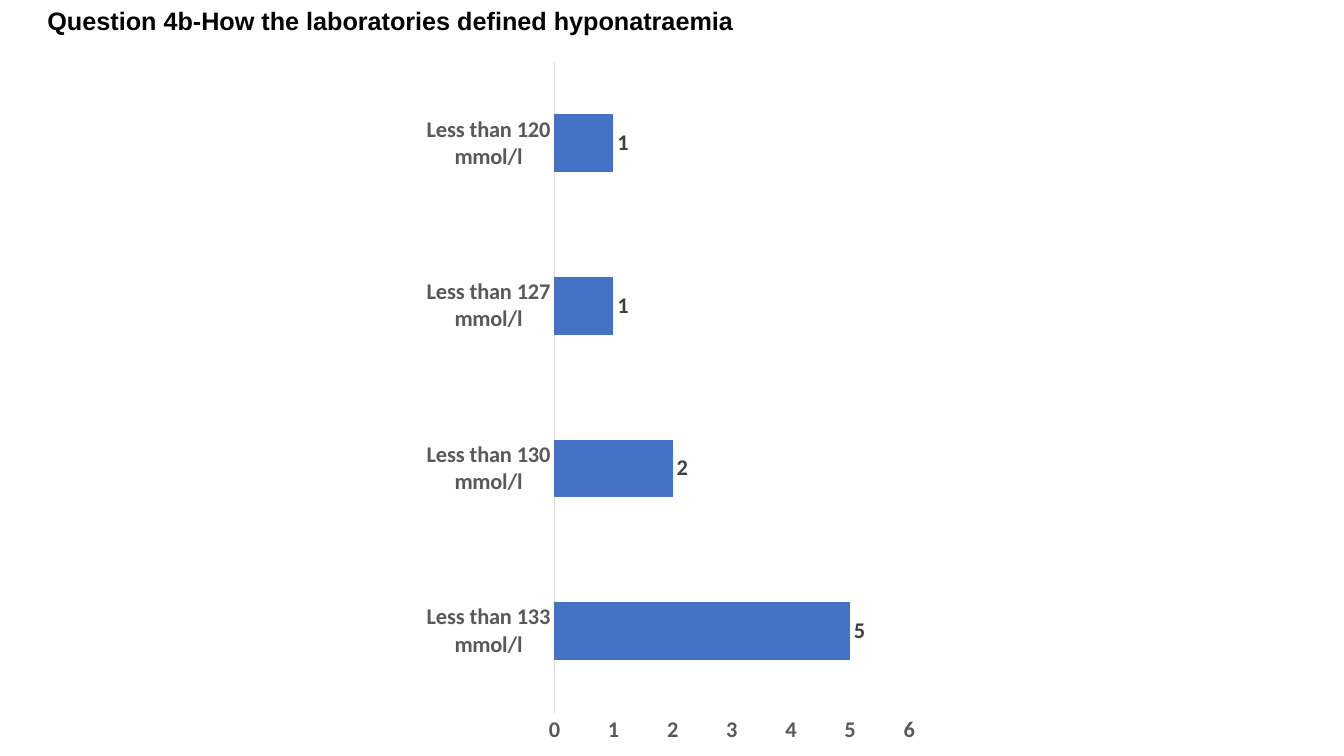
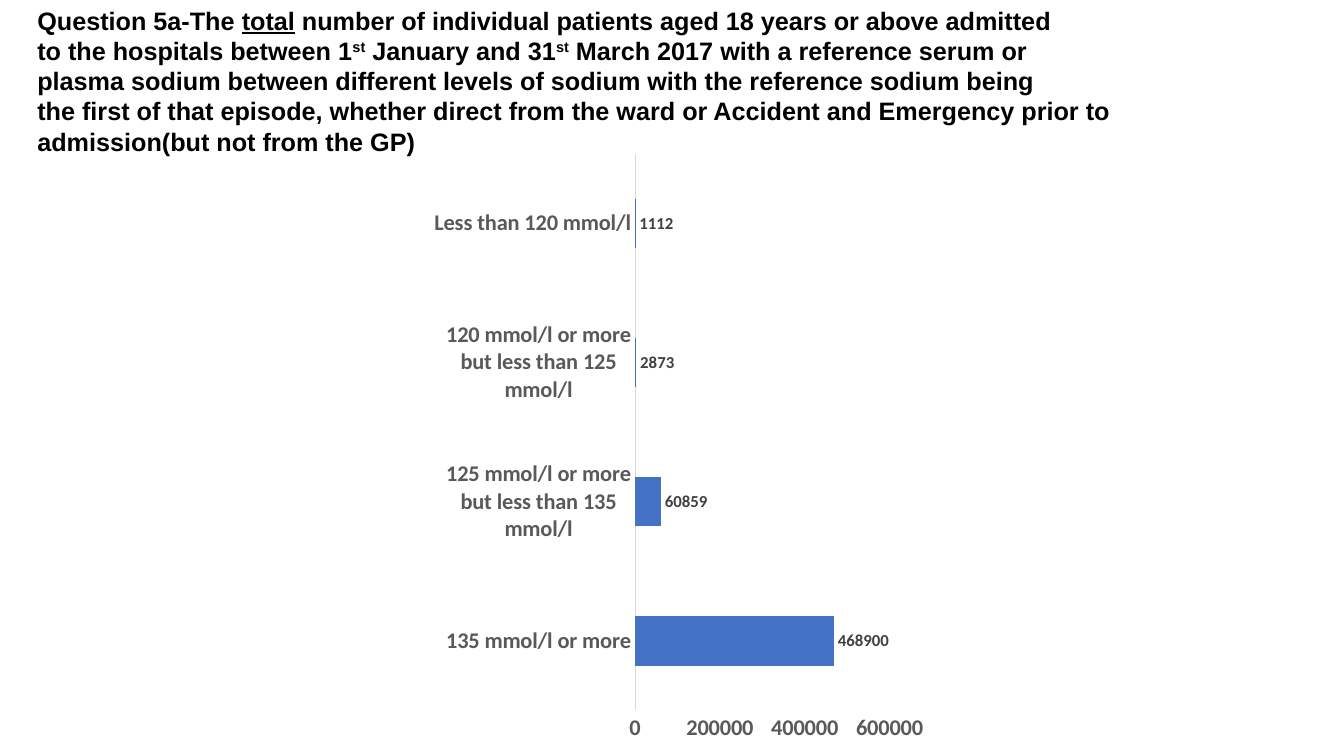
"""Build two survey slides, each with a title and a bar chart of sodium levels."""
from lxml import etree
from pptx import Presentation
from pptx.chart.data import CategoryChartData
from pptx.dml.color import RGBColor as RGB
from pptx.enum.chart import XL_CHART_TYPE as CT, XL_LABEL_POSITION as LP, XL_TICK_MARK as TM
from pptx.enum.text import MSO_ANCHOR as MA, MSO_AUTO_SIZE as AS, PP_ALIGN as PA
from pptx.oxml import parse_xml
from pptx.util import Inches, Pt

COLORS = {"text": "000000", "bar": "4472C4", "axis": "595959", "line": "D9D9D9", "label": "404040"}
TITLE = {"name": "Arial", "size": Pt(18), "bold": True}
CHART = {"name": "Calibri", "size": Pt(10)}
AXIS = {"name": "Calibri", "size": Pt(16), "bold": True}
NS = "http://schemas.openxmlformats.org/drawingml/2006/chart"
UNDER, SUPER = {"u": "sng"}, {"baseline": "30000"}

SLIDES = [
    {
        "title": [[("Question 4b-How the laboratories defined hyponatraemia", {})]],
        "title_box": (2.78, 0, 53.04, 5.33),
        "wrap": False,
        "chart_box": (31.5, 8.13, 37.5, 90.27),
        "plot": {"x": 0.26, "y": 0, "w": 0.704, "h": 0.956},
        "scale": {"minimum_scale": 0, "maximum_scale": 6, "major_unit": 1},
        "label_size": 16,
        "data": {
            "Less than 133 mmol/l": 5,
            "Less than 130 mmol/l": 2,
            "Less than 127 mmol/l": 1,
            "Less than 120 mmol/l": 1,
        },
    },
    {
        "title": [
            [("Question 5a-The ", {}), ("total", UNDER),
             (" number of individual patients aged 18 years or above admitted", {})],
            [("to the hospitals between 1", {}), ("st", SUPER), (" January and 31", {}),
             ("st", SUPER), (" March 2017 with a reference serum or", {})],
            [("plasma sodium between different levels of sodium with the reference sodium being", {})],
            [("the first of that episode, whether direct from the ward or Accident and "
              "Emergency prior to admission(but not from the GP)", {})],
        ],
        "title_box": (2.03, 0, 82.37, 21.6),
        "wrap": True,
        "chart_box": (31.28, 20.27, 37.5, 78.67),
        "plot": {"x": 0.426, "y": 0, "w": 0.505, "h": 0.937},
        "scale": {"minimum_scale": 0, "maximum_scale": 600000, "major_unit": 200000},
        "label_size": 12,
        "data": {
            "135 mmol/l or more": 468900,
            "125 mmol/l or more but less than 135 mmol/l": 60859,
            "120 mmol/l or more but less than 125 mmol/l": 2873,
            "Less than 120 mmol/l": 1112,
        },
    },
]

prs = Presentation()
prs.slide_width, prs.slide_height = Inches(13.33), Inches(7.5)


def box(shares):
    """Turn percentages of the slide into left, top, width and height."""
    sides = (prs.slide_width, prs.slide_height) * 2
    return [int(side * share / 100) for side, share in zip(sides, shares)]


def style(font, formats, color):
    """Apply font formats and a named colour."""
    for key, value in formats.items():
        setattr(font, key, value)
    font.color.rgb = RGB.from_string(COLORS[color])


for item in SLIDES:
    s = prs.slides.add_slide(prs.slide_layouts[5])

    data = CategoryChartData()
    data.categories = list(item["data"])
    data.add_series("Series 1", list(item["data"].values()))
    chart = s.shapes.add_chart(CT.BAR_CLUSTERED, *box(item["chart_box"]), data).chart
    chart.has_legend = chart.has_title = False
    style(chart.font, CHART, "text")

    for axis in (chart.category_axis, chart.value_axis):
        axis.major_tick_mark = axis.minor_tick_mark = TM.NONE
        axis.has_major_gridlines = False
        style(axis.tick_labels.font, AXIS, "axis")
    line = chart.category_axis.format.line
    line.width = Pt(0.75)
    line.color.rgb = RGB.from_string(COLORS["line"])
    chart.value_axis.format.line.fill.background()
    for key, value in item["scale"].items():
        setattr(chart.value_axis, key, value)

    plot = chart.plots[0]
    plot.gap_width = 182
    plot.vary_by_categories = False
    fill = plot.series[0].format.fill
    fill.solid()
    fill.fore_color.rgb = RGB.from_string(COLORS["bar"])
    plot.has_data_labels = True
    labels = plot.data_labels
    labels.show_value = True
    labels.position = LP.OUTSIDE_END
    style(labels.font, AXIS | {"size": Pt(item["label_size"])}, "label")

    area = chart._chartSpace.chart.plotArea
    for old in area.findall(f"{{{NS}}}layout"):
        area.remove(old)
    layout = parse_xml(f'<c:layout xmlns:c="{NS}"><c:manualLayout/></c:layout>')
    settings = {"layoutTarget": "inner", "xMode": "edge", "yMode": "edge"} | item["plot"]
    for key, value in settings.items():
        etree.SubElement(layout[0], f"{{{NS}}}{key}").set("val", str(value))
    area.insert(0, layout)

    sp = s.shapes.title
    sp.left, sp.top, sp.width, sp.height = box(item["title_box"])
    tf = sp.text_frame
    tf.word_wrap = item["wrap"]
    tf.auto_size = AS.SHAPE_TO_FIT_TEXT
    tf.vertical_anchor = MA.TOP
    for i, runs in enumerate(item["title"]):
        p = tf.add_paragraph() if i else tf.paragraphs[0]
        p.alignment = PA.LEFT
        for text, marks in runs:
            r = p.add_run()
            r.text = text
            style(r.font, TITLE, "text")
            for key, value in marks.items():
                r._r.get_or_add_rPr().set(key, value)

prs.save("out.pptx")
